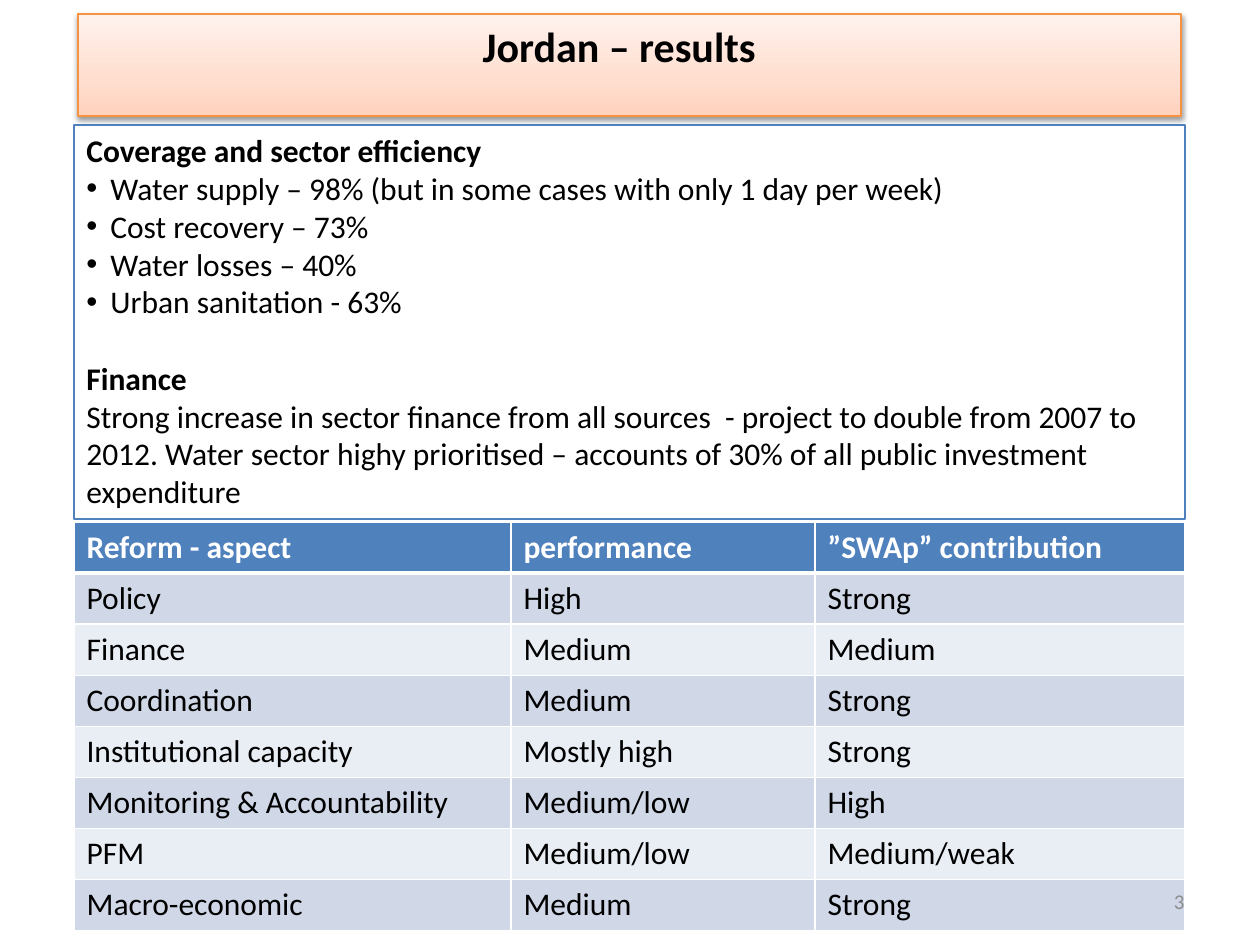
from lxml.etree import SubElement as Sub
from pptx import Presentation
from pptx.dml.color import RGBColor
from pptx.enum.shapes import MSO_SHAPE as Shape
from pptx.enum.text import MSO_ANCHOR as Anchor, PP_ALIGN as Align
from pptx.oxml import parse_xml
from pptx.oxml.ns import nsdecls, qn
from pptx.util import Emu, Pt

FONT = "Calibri"
BLACK, WHITE, BLUE = "000000", "FFFFFF", "4F81BD"
BANDS = ["D0D8E8", "E9EDF4"]
GLOW = [(0, "FFD2BD"), (35, "FFDED0"), (100, "FFF2ED")]

TITLE = "Jordan – results"
# kind, text
NOTES = [
    ("head", "Coverage and sector efficiency"),
    ("item", "Water supply – 98% (but in some cases with only 1 day per week)"),
    ("item", "Cost recovery – 73%"),
    ("item", "Water losses – 40%"),
    ("item", "Urban sanitation - 63%"),
    ("head", "Finance"),
    ("body", "Strong increase in sector finance from all sources  - project to "
             "double from 2007 to 2012. Water sector highy prioritised – accounts "
             "of 30% of all public investment expenditure"),
]
ROWS = [
    ("Reform - aspect", "performance", "”SWAp” contribution"),
    ("Policy", "High", "Strong"),
    ("Finance", "Medium", "Medium"),
    ("Coordination", "Medium", "Strong"),
    ("Institutional capacity", "Mostly high", "Strong"),
    ("Monitoring & Accountability", "Medium/low", "High"),
    ("PFM", "Medium/low", "Medium/weak"),
    ("Macro-economic", "Medium", "Strong"),
]
COLS = [437, 304, 370]
ROW = 51
LEFT = 74
WIDE = sum(COLS)


def px(n):
    return Emu(round(n * 914400 / 126))


def rgb(code):
    return RGBColor.from_string(code)


def write(para, text, size=18, color=BLACK, bold=False):
    run = para.add_run()
    run.text = text
    font = run.font
    font.name, font.size, font.bold = FONT, Pt(size), bold
    font.color.rgb = rgb(color)


def panel(slide, box, line):
    """Add an unfilled rectangle with a thin outline and text from the top."""
    rect = slide.shapes.add_shape(Shape.RECTANGLE, *map(px, box))
    rect.shadow.inherit = False
    rect.fill.background()
    rect.line.color.rgb = rgb(line)
    rect.line.width = Pt(0.75)
    rect.text_frame.word_wrap = True
    rect.text_frame.vertical_anchor = Anchor.TOP
    return rect


def shade(rect):
    """Give the rectangle the upward gradient and a soft shadow."""
    props = rect._element.spPr
    stops = "".join(f'<a:gs pos="{at * 1000}"><a:srgbClr val="{code}"/></a:gs>'
                    for at, code in GLOW)
    props.replace(props.find(qn("a:noFill")), parse_xml(
        f'<a:gradFill {nsdecls("a")} rotWithShape="1"><a:gsLst>{stops}</a:gsLst>'
        '<a:lin ang="16200000" scaled="0"/></a:gradFill>'))
    glow = Sub(props.find(qn("a:effectLst")), qn("a:outerShdw"), blurRad="40000",
               dist="20000", dir="5400000", rotWithShape="0")
    tint = Sub(glow, qn("a:srgbClr"), val=BLACK)
    Sub(tint, qn("a:alpha"), val="38000")


def bullet(para):
    props = para._p.get_or_add_pPr()
    indent = px(24)
    props.set("marL", str(indent))
    props.set("indent", str(-indent))
    Sub(props, qn("a:buFont"), typeface="Arial")
    Sub(props, qn("a:buChar"), char="•")


def edge(cell, row):
    """Draw white cell borders, thick between the header and the body."""
    props = cell._tc.get_or_add_tcPr()
    for side in "LRTB":
        thick = (side, row) in (("B", 0), ("T", 1))
        line = Sub(props, qn(f"a:ln{side}"), w=str(Pt(3 if thick else 1)))
        Sub(Sub(line, qn("a:solidFill")), qn("a:srgbClr"), val=WHITE)


def add_title(slide):
    rect = panel(slide, (78, 14, 1103, 102), "F69240")
    shade(rect)
    frame = rect.text_frame
    frame.margin_right = px(33)
    para = frame.paragraphs[0]
    para.alignment = Align.CENTER
    write(para, TITLE, 24, bold=True)


def add_notes(slide):
    frame = panel(slide, (LEFT, 125, WIDE, 394), BLUE).text_frame
    for i, (kind, text) in enumerate(NOTES):
        para = frame.add_paragraph() if i else frame.paragraphs[0]
        para.alignment = Align.LEFT
        if kind == "item":
            bullet(para)
        elif kind == "head" and i:
            para.space_before = Pt(22)
        write(para, text, bold=kind == "head")


def add_grid(slide):
    grid = slide.shapes.add_table(len(ROWS), len(COLS), px(LEFT), px(522),
                                  px(WIDE), px(ROW * len(ROWS))).table
    for col, wide in zip(grid.columns, COLS):
        col.width = px(wide)
    for r, texts in enumerate(ROWS):
        grid.rows[r].height = px(ROW)
        for c, text in enumerate(texts):
            cell = grid.cell(r, c)
            edge(cell, r)
            cell.fill.solid()
            cell.fill.fore_color.rgb = rgb(BANDS[(r - 1) % 2] if r else BLUE)
            write(cell.text_frame.paragraphs[0], text,
                  color=BLACK if r else WHITE, bold=r == 0)


def add_number(slide):
    frame = slide.shapes.add_textbox(*map(px, (903, 876, 294, 50))).text_frame
    frame.word_wrap = True
    frame.vertical_anchor = Anchor.MIDDLE
    para = frame.paragraphs[0]
    para.alignment = Align.RIGHT
    write(para, "3", 12, "8C8C8C")


def main():
    deck = Presentation()
    deck.slide_width, deck.slide_height = px(1260), px(945)
    slide = deck.slides.add_slide(deck.slide_layouts[6])
    for add in (add_title, add_notes, add_grid, add_number):
        add(slide)
    deck.save("out.pptx")


if __name__ == "__main__":
    main()
